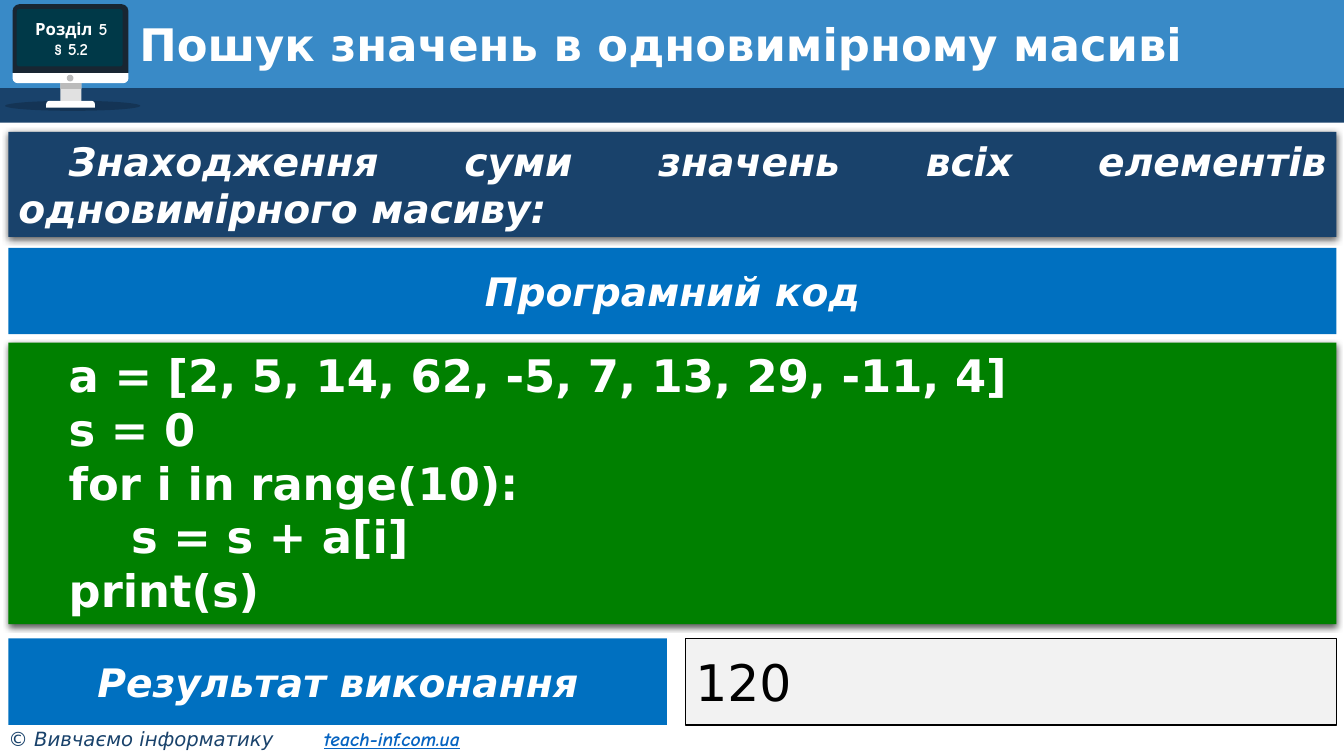
from lxml import etree
from pptx import Presentation
from pptx.dml.color import RGBColor
from pptx.enum.shapes import MSO_SHAPE
from pptx.enum.text import MSO_ANCHOR, PP_ALIGN
from pptx.oxml.ns import qn
from pptx.util import Inches, Pt

RECT = MSO_SHAPE.RECTANGLE
OVAL = MSO_SHAPE.OVAL
ROUND = MSO_SHAPE.ROUNDED_RECTANGLE
CAPPED = MSO_SHAPE.ROUND_2_SAME_RECTANGLE
TOP, MIDDLE = MSO_ANCHOR.TOP, MSO_ANCHOR.MIDDLE
LEFT, CENTER, JUSTIFY = PP_ALIGN.LEFT, PP_ALIGN.CENTER, PP_ALIGN.JUSTIFY

WHITE = RGBColor(0xFF, 0xFF, 0xFF)
BLACK = RGBColor(0x00, 0x00, 0x00)
SKY = RGBColor(0x39, 0x8A, 0xC7)
NAVY = RGBColor(0x19, 0x42, 0x6B)
BLUE = RGBColor(0x00, 0x70, 0xC0)
GREEN = RGBColor(0x00, 0x80, 0x00)
PALE = RGBColor(0xF2, 0xF2, 0xF2)
CASE = RGBColor(0x18, 0x26, 0x32)
GLASS = RGBColor(0x00, 0x39, 0x48)
STEEL = RGBColor(0xE1, 0xE1, 0xE1)
GRAY = RGBColor(0xBB, 0xBB, 0xBB)
LINK = RGBColor(0x05, 0x63, 0xC1)

SANS, COMIC = "DejaVu Sans", "Comic Neue"
COLS, ROWS = 160, 90
EDGE, SPAN, BAND = 1, 158.1, 10.3
CODE = [
    "a = [2, 5, 14, 62, -5, 7, 13, 29, -11, 4]",
    "s = 0",
    "for i in range(10):",
    "    s = s + a[i]",
    "print(s)",
]


class Lesson:
    def __init__(self):
        self.deck = Presentation()
        self.deck.slide_width = Inches(13.33)
        self.deck.slide_height = Inches(7.5)
        self.slide = self.deck.slides.add_slide(self.deck.slide_layouts[6])

    def place(self, left, top, width, height):
        col = self.deck.slide_width / COLS
        row = self.deck.slide_height / ROWS
        return [round(n) for n in (left * col, top * row, width * col, height * row)]

    def shape(self, kind, area, fill, curves=(), alpha=None, line=None):
        item = self.slide.shapes.add_shape(kind, *self.place(*area))
        item.shadow.inherit = False
        item.fill.solid()
        item.fill.fore_color.rgb = fill
        if line is None:
            item.line.fill.background()
        else:
            item.line.color.rgb = line
            item.line.width = Pt(1)
        for index, curve in enumerate(curves):
            item.adjustments[index] = curve
        if alpha:
            tint = item.fill._xPr.find(".//" + qn("a:srgbClr"))
            etree.SubElement(tint, qn("a:alpha"), val=str(alpha * 1000))
        return item

    def text(self, item, lines, size, color=WHITE, font=SANS, bold=True,
             slant=False, align=LEFT, anchor=MIDDLE, indent=0, pitch=None):
        frame = item.text_frame
        frame.word_wrap = True
        frame.vertical_anchor = anchor
        for index, line in enumerate(lines):
            para = frame.add_paragraph() if index else frame.paragraphs[0]
            para.text = line
            para.alignment = align
            if pitch:
                para.line_spacing = pitch
            if indent:
                props = para._p.get_or_add_pPr()
                props.set("marL", "0")
                props.set("indent", str(Inches(indent)))
            para.font.name = font
            para.font.size = Pt(size)
            para.font.bold = bold
            para.font.italic = slant
            para.font.color.rgb = color

    def box(self, area):
        return self.slide.shapes.add_textbox(*self.place(*area))

    def shade(self, item):
        effects = item._element.spPr.find(qn("a:effectLst"))
        cast = etree.SubElement(effects, qn("a:outerShdw"), blurRad=str(Pt(4.5)),
                                dist=str(Pt(1.5)), dir="5400000", algn="ctr",
                                rotWithShape="0")
        tint = etree.SubElement(cast, qn("a:srgbClr"), val=str(BLACK))
        etree.SubElement(tint, qn("a:alpha"), val="63000")

    def panel(self, top, height, fill, lines, size, slant=False):
        item = self.shape(RECT, (EDGE, top, SPAN, height), fill)
        self.shade(item)
        self.text(item, lines, size, slant=slant, align=JUSTIFY, anchor=TOP, indent=0.5)

    def label(self, top, width, words):
        item = self.shape(RECT, (EDGE, top, width, BAND), BLUE)
        self.text(item, [words], 28, slant=True, align=CENTER)

    def screen(self):
        self.shape(OVAL, (0.6, 12, 16.1, 1.2), BLACK, alpha=20)
        self.shape(CAPPED, (1.5, 0.5, 13.8, 8.2), CASE, (0.1, 0))
        self.shape(CAPPED, (1.5, 8.7, 13.8, 1.2), WHITE, (0, 0.5))
        self.shape(RECT, (7.2, 9.9, 2.5, 2.1), STEEL)
        self.shape(RECT, (7.2, 9.9, 2.5, 0.7), GRAY)
        self.shape(CAPPED, (5.5, 12, 5.8, 0.8), WHITE, (0.5, 0))
        self.shape(OVAL, (7.95, 8.9, 0.8, 0.8), GRAY)
        self.shape(ROUND, (2, 1.1, 12.6, 6.8), GLASS, (0.04,))
        badge = self.box((1.6, 1.1, 13.8, 7.1))
        self.text(badge, ["Розділ 5", "§ 5.2"], 12, font=COMIC, align=CENTER)

    def footer(self):
        frame = self.box((-0.2, 85.9, 62.8, 4.1)).text_frame
        frame.word_wrap = True
        para = frame.paragraphs[0]
        tabs = etree.SubElement(para._p.get_or_add_pPr(), qn("a:tabLst"))
        etree.SubElement(tabs, qn("a:tab"), pos=str(Inches(3.13)), algn="l")
        para.font.size = Pt(14)
        para.font.italic = True
        parts = [
            ("© Вивчаємо інформатику\t", SANS, NAVY, False),
            ("teach-inf.com.ua", COMIC, LINK, True),
        ]
        for words, font, color, strong in parts:
            run = para.add_run()
            run.text = words
            run.font.name = font
            run.font.color.rgb = color
            run.font.bold = strong
            run.font.underline = strong


def main():
    page = Lesson()
    page.shape(RECT, (0, 0, COLS, 10.9), SKY)
    page.shape(RECT, (0, 10.5, COLS, 4.1), NAVY)
    page.screen()
    page.footer()
    page.text(page.box((15.4, 2.1, 140.6, 7)),
              ["Пошук значень в одновимірному масиві"], 32, pitch=0.9)
    page.panel(15.7, 12.5, NAVY,
               ["Знаходження суми значень всіх елементів одновимірного масиву:"],
               28, slant=True)
    page.label(29.5, SPAN, "Програмний код")
    page.panel(40.8, 33.5, GREEN, CODE, 32)
    page.label(76, 78.4, "Результат виконання")
    answer = page.shape(RECT, (81.6, 76, 77.5, BAND), PALE, line=BLACK)
    page.text(answer, ["120"], 36, color=BLACK, bold=False)
    page.deck.save("out.pptx")


if __name__ == "__main__":
    main()
